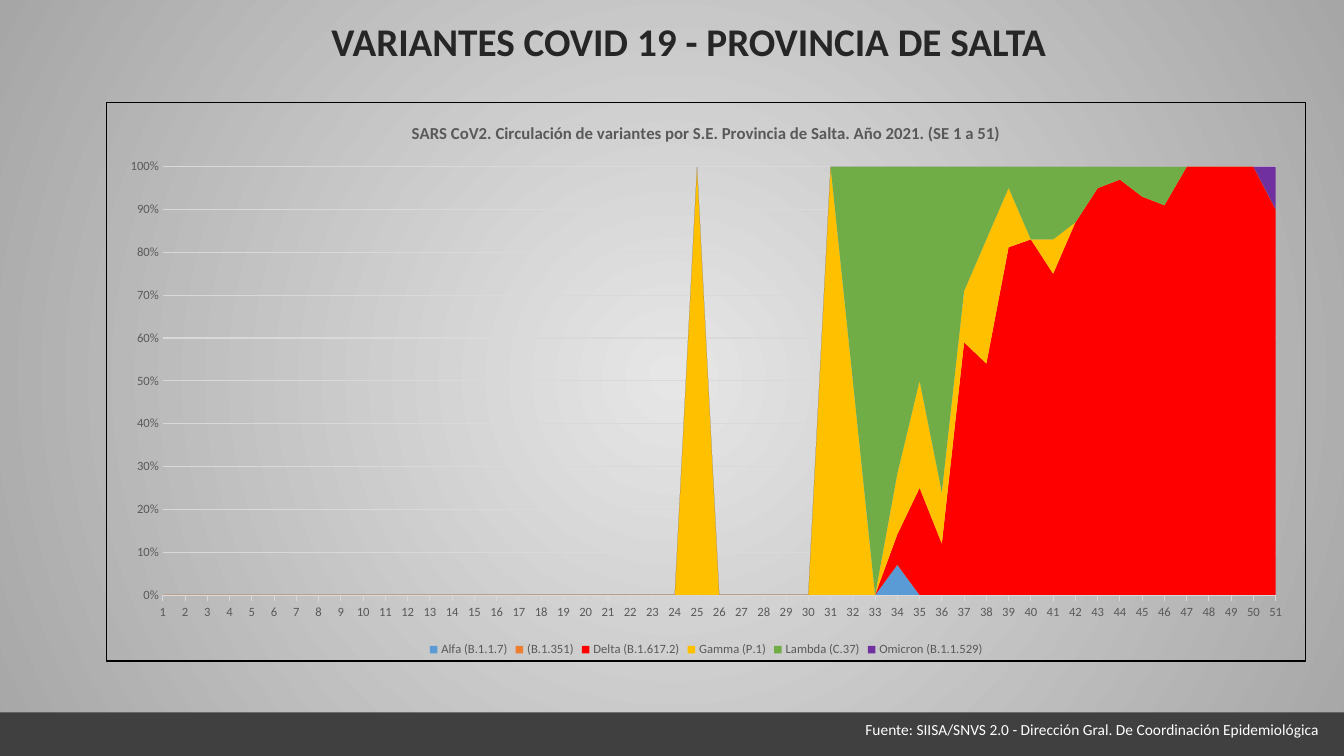
from lxml.etree import SubElement
from pptx import Presentation
from pptx.chart.data import CategoryChartData
from pptx.dml.color import RGBColor
from pptx.enum.chart import XL_CHART_TYPE, XL_LEGEND_POSITION, XL_TICK_MARK
from pptx.enum.shapes import MSO_SHAPE
from pptx.enum.text import MSO_ANCHOR, PP_ALIGN
from pptx.oxml import parse_xml
from pptx.oxml.ns import nsdecls, qn
from pptx.util import Cm, Pt

FONT = "Calibri"
GREY = "595959"
PALE = "D9D9D9"
WEEKS = range(1, 52)

DELTA = [7, 25, 12, 59, 54, 82, 83, 75, 87, 95, 97, 93, 91, 100, 100, 100, 100, 90]
GAMMA = [100, 50, 0, 14, 25, 12, 12, 29, 14, 0, 8]
LAMBDA = [50, 100, 71, 50, 76, 29, 17, 5, 17, 17, 13, 5, 3, 7, 9]
VARIANTS = [
    ("Alfa (B.1.1.7)", "5B9BD5", {34: 7}),
    ("(B.1.351)", "ED7D31", {}),
    ("Delta (B.1.617.2)", "FF0000", dict(enumerate(DELTA, 34))),
    ("Gamma (P.1)", "FFC000", {25: 100, **dict(enumerate(GAMMA, 31))}),
    ("Lambda (C.37)", "70AD47", dict(enumerate(LAMBDA, 32))),
    ("Omicron (B.1.1.529)", "7030A0", {51: 10}),
]


def color(value):
    return RGBColor.from_string(value)


def style_font(font, size, value, bold=False):
    font.name = FONT
    font.size = Pt(size)
    font.color.rgb = color(value)
    font.bold = bold


def place(shape, box):
    shape.left, shape.top, shape.width, shape.height = map(Cm, box)


def write(frame, text, size, value, bold=False):
    frame.word_wrap = True
    frame.vertical_anchor = MSO_ANCHOR.TOP
    para = frame.paragraphs[0]
    para.alignment = PP_ALIGN.LEFT
    span = para.add_run()
    span.text = text
    style_font(span.font, size, value, bold)


def paint_background(page):
    fill = page.background.fill
    fill.gradient()
    for stop, value in zip(fill.gradient_stops, ("E7E6E6", "A6A6A6")):
        stop.color.rgb = color(value)
    linear = page.element.find(".//" + qn("a:lin"))
    radial = parse_xml(
        f'<a:path {nsdecls("a")} path="circle">'
        '<a:fillToRect l="50000" t="50000" r="50000" b="50000"/></a:path>'
    )
    linear.getparent().replace(linear, radial)


def add_heading(page, box):
    title = page.shapes.title
    place(title, box)
    write(title.text_frame, "VARIANTES COVID 19 - PROVINCIA DE SALTA", 28, "262626", True)


def add_footer(page, box):
    left, top, width, height = box
    band = page.shapes.add_shape(MSO_SHAPE.RECTANGLE, *map(Cm, box))
    band.shadow.inherit = False
    band.fill.solid()
    band.fill.fore_color.rgb = color("404040")
    band.line.fill.background()
    offset = 21.56
    source = page.shapes.add_textbox(
        Cm(left + offset), Cm(top + 0.08), Cm(width - offset), Cm(0.74)
    )
    write(
        source.text_frame,
        "Fuente: SIISA/SNVS 2.0 - Dirección Gral. De Coordinación Epidemiológica",
        11,
        "FFFFFF",
    )


def fix_plot_area(chart):
    plot_area = chart.element.find(".//" + qn("c:plotArea"))
    for old in plot_area.findall(qn("c:layout")):
        plot_area.remove(old)
    layout = parse_xml(f'<c:layout {nsdecls("c")}/>')
    manual = SubElement(layout, qn("c:manualLayout"))
    settings = {
        "layoutTarget": "inner", "xMode": "edge", "yMode": "edge",
        "x": 0.047, "y": 0.115, "w": 0.928, "h": 0.767,
    }
    for name, value in settings.items():
        SubElement(manual, qn("c:" + name)).set("val", str(value))
    plot_area.insert(0, layout)


def frame_chart(chart):
    border = parse_xml(
        f'<c:spPr {nsdecls("c", "a")}><a:noFill/><a:ln w="9525"><a:solidFill>'
        '<a:srgbClr val="000000"/></a:solidFill></a:ln></c:spPr>'
    )
    chart.element.find(qn("c:chart")).addnext(border)


def style_axes(chart):
    weeks, share = chart.category_axis, chart.value_axis
    for axis in (weeks, share):
        style_font(axis.tick_labels.font, 9, GREY)
        axis.minor_tick_mark = XL_TICK_MARK.NONE
    weeks.has_major_gridlines = False
    weeks.major_tick_mark = XL_TICK_MARK.OUTSIDE
    share.major_tick_mark = XL_TICK_MARK.NONE
    share.has_major_gridlines = True
    for line in (weeks.format.line, share.major_gridlines.format.line):
        line.color.rgb = color(PALE)
        line.width = Pt(0.75)
    share.format.line.fill.background()
    share.minimum_scale, share.maximum_scale, share.major_unit = 0, 1, 0.1
    share.tick_labels.number_format = "0%"
    share.tick_labels.number_format_is_linked = False
    chart.element.find(".//" + qn("c:valAx") + "/" + qn("c:crossBetween")).set("val", "midCat")


def add_variant_chart(page, box):
    data = CategoryChartData()
    data.categories = [str(week) for week in WEEKS]
    for name, _, shares in VARIANTS:
        data.add_series(name, [shares.get(week, 0) for week in WEEKS])
    chart = page.shapes.add_chart(
        XL_CHART_TYPE.AREA_STACKED_100, *map(Cm, box), data
    ).chart
    style_font(chart.font, 10, "000000")
    chart.plots[0].vary_by_categories = False
    for series, (_, value, _) in zip(chart.plots[0].series, VARIANTS):
        series.format.fill.solid()
        series.format.fill.fore_color.rgb = color(value)
        series.format.line.fill.background()
    chart.has_title = True
    span = chart.chart_title.text_frame.paragraphs[0].add_run()
    span.text = "SARS CoV2. Circulación de variantes por S.E. Provincia de Salta. Año 2021. (SE 1 a 51)"
    style_font(span.font, 12, GREY, True)
    chart.chart_title.include_in_layout = False
    chart.has_legend = True
    chart.legend.position = XL_LEGEND_POSITION.BOTTOM
    chart.legend.include_in_layout = False
    style_font(chart.legend.font, 9, GREY)
    style_axes(chart)
    fix_plot_area(chart)
    frame_chart(chart)


def main():
    deck = Presentation()
    deck.slide_width, deck.slide_height = Cm(33.87), Cm(19.05)
    page = deck.slides.add_slide(deck.slide_layouts[5])
    paint_background(page)
    add_footer(page, (0, 17.95, 33.87, 1.1))
    add_heading(page, (8.1, 0.3, 24.61, 2.24))
    add_variant_chart(page, (2.67, 2.57, 30.25, 14.1))
    deck.save("out.pptx")


if __name__ == "__main__":
    main()
